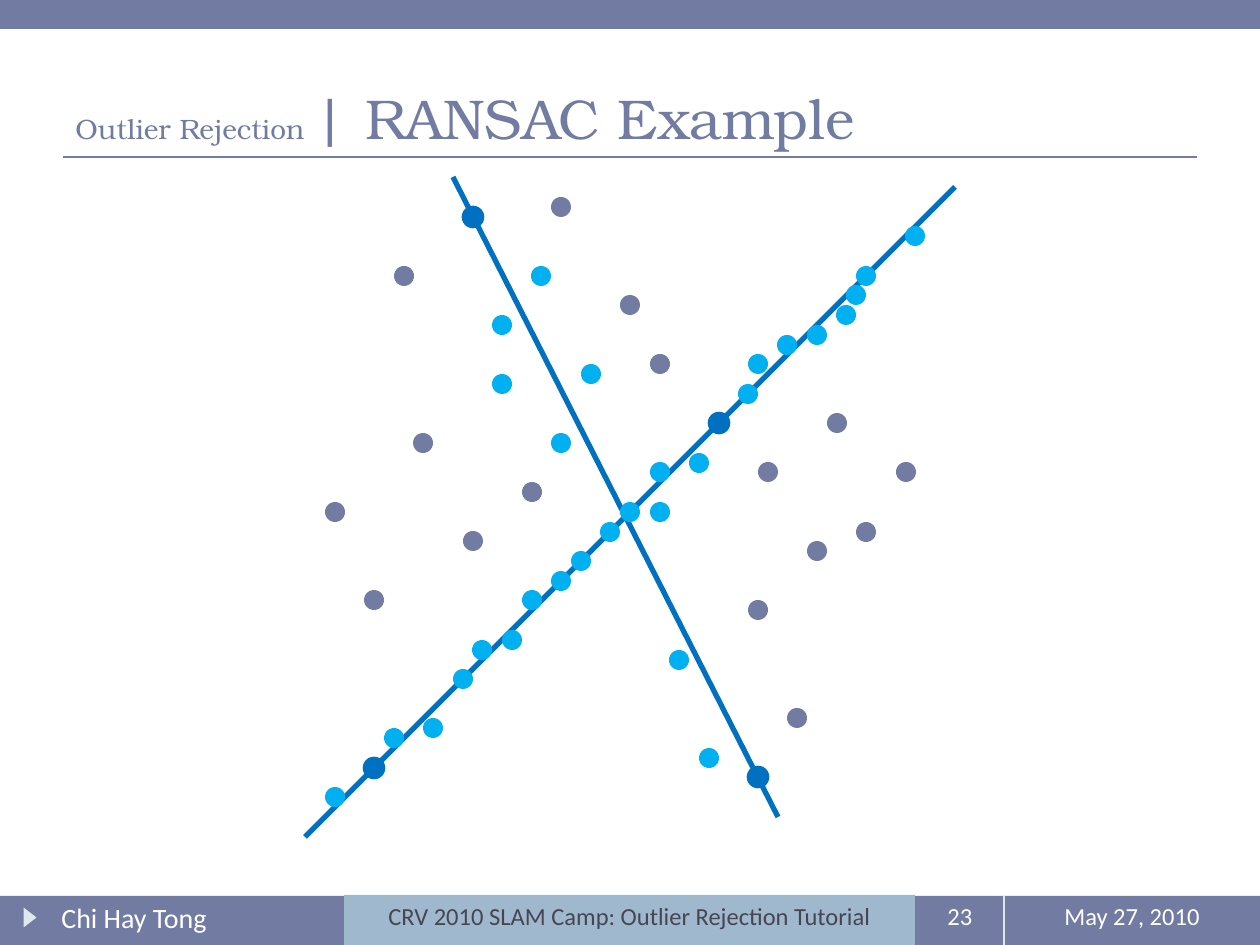
from typing import NamedTuple

from lxml.etree import SubElement
from pptx import Presentation
from pptx.dml.color import RGBColor
from pptx.enum.shapes import MSO_CONNECTOR, MSO_SHAPE as Shape
from pptx.enum.text import MSO_ANCHOR as Anchor, PP_ALIGN as Align
from pptx.oxml.ns import qn
from pptx.util import Pt

EMU_PER_PX = 914400 / 126
SLATE, PALE, BLUE, SKY = "727CA3", "DDE9EC", "0070C0", "00B0F0"
WHITE, BAND, INK = "FFFFFF", "9FB8CD", "464653"
SERIF, SANS = "TeX Gyre Bonum", "Calibri"
DOT = 20
FOOTER_TOP, FOOTER_HEIGHT = 895, 50


class Point(NamedTuple):
    x: int
    y: int


class Box(NamedTuple):
    x: int
    y: int
    w: int
    h: int


class Label(NamedTuple):
    text: str
    box: Box
    size: int
    align: Align
    color: str = WHITE
    fill: str = ""


class Model(NamedTuple):
    """A candidate line, the two samples that define it and its inliers."""
    samples: list[Point]
    start: Point
    end: Point
    inliers: list[Point]


def points(*pairs: tuple[int, int]) -> list[Point]:
    return [Point(*pair) for pair in pairs]


OUTLIERS = points(
    (561, 207), (817, 551), (404, 276), (423, 443), (335, 512), (630, 305),
    (532, 492), (473, 541), (374, 600), (660, 364), (837, 423), (768, 472),
    (906, 472), (866, 532), (758, 610), (797, 718))

MODELS = [
    Model(points((374, 768), (719, 423)), Point(305, 837), Point(955, 187), points(
        (335, 797), (394, 738), (433, 728), (463, 679), (482, 650), (512, 640),
        (532, 600), (561, 581), (581, 561), (660, 472), (699, 463), (748, 394),
        (758, 364), (787, 345), (817, 335), (846, 315), (856, 295), (866, 276),
        (915, 236))),
    Model(points((473, 217), (758, 777)), Point(778, 817), Point(453, 177), points(
        (502, 325), (541, 276), (502, 384), (591, 374), (561, 443), (679, 660),
        (709, 758), (610, 532), (630, 512), (660, 512))),
]

FOOTER = [
    Label("23", Box(916, FOOTER_TOP, 88, FOOTER_HEIGHT), 14, Align.CENTER),
    Label("May 27, 2010", Box(1004, FOOTER_TOP, 256, FOOTER_HEIGHT), 14, Align.CENTER),
    Label("Chi Hay Tong", Box(49, FOOTER_TOP - 1, 273, FOOTER_HEIGHT), 16, Align.LEFT),
    Label("CRV 2010 SLAM Camp: Outlier Rejection Tutorial",
          Box(344, FOOTER_TOP, 571, FOOTER_HEIGHT), 14, Align.CENTER, INK, BAND),
]


def px(n: int) -> int:
    return round(n * EMU_PER_PX)


def rgb(color: str) -> RGBColor:
    return RGBColor.from_string(color)


def add_shape(shapes, kind: Shape, box: Box, fill: str, outline: float = 0):
    s = shapes.add_shape(kind, *map(px, box))
    s.shadow.inherit = False
    s.fill.solid()
    s.fill.fore_color.rgb = rgb(fill)
    if outline:
        s.line.color.rgb = rgb(fill)
        s.line.width = Pt(outline)
    else:
        s.line.fill.background()
    return s


def add_line(shapes, start: Point, end: Point, color: str, width: float) -> None:
    c = shapes.add_connector(MSO_CONNECTOR.STRAIGHT, *map(px, start + end))
    c.line.color.rgb = rgb(color)
    c.line.width = Pt(width)
    SubElement(c._element.spPr, qn("a:effectLst"))


def add_dots(shapes, centres: list[Point], color: str, outline: float = 0) -> None:
    for x, y in centres:
        box = Box(x - DOT // 2, y - DOT // 2, DOT, DOT)
        add_shape(shapes, Shape.OVAL, box, color, outline)


def add_model(shapes, model: Model) -> None:
    add_dots(shapes, model.samples, BLUE, 1.5)
    add_line(shapes, model.start, model.end, BLUE, 3)
    add_dots(shapes.add_group_shape().shapes, model.inliers, SKY)


def add_label(shapes, label: Label) -> None:
    if label.fill:
        s = add_shape(shapes, Shape.RECTANGLE, label.box, label.fill)
    else:
        s = shapes.add_textbox(*map(px, label.box))
    tf = s.text_frame
    tf.word_wrap = True
    tf.vertical_anchor = Anchor.TOP
    p = tf.paragraphs[0]
    p.text = label.text
    p.alignment = label.align
    p.font.name = SANS
    p.font.size = Pt(label.size)
    p.font.color.rgb = rgb(label.color)


def add_title(shapes) -> None:
    tf = shapes.add_textbox(*map(px, Box(63, 21, 1134, 136))).text_frame
    tf.word_wrap = True
    tf.vertical_anchor = Anchor.BOTTOM
    p = tf.paragraphs[0]
    p.font.name = SERIF
    p.font.color.rgb = rgb(SLATE)
    for text, size in (("Outlier Rejection ", 16), ("| RANSAC Example", 32)):
        r = p.add_run()
        r.text = text
        r.font.size = Pt(size)


def add_frame(shapes) -> None:
    """Top and bottom bars, with the rules and marks that belong to them."""
    add_shape(shapes, Shape.RECTANGLE, Box(0, 896, 1260, 49), SLATE)
    add_line(shapes, Point(63, 157), Point(1197, 157), SLATE, 0.75)
    marker = add_shape(shapes, Shape.ISOSCELES_TRIANGLE, Box(20, 911, 20, 13), PALE)
    marker.rotation = 90
    add_shape(shapes, Shape.RECTANGLE, Box(0, 0, 1260, 29), SLATE)
    add_line(shapes, Point(1004, 896), Point(1004, 945), PALE, 0.75)


def main() -> None:
    prs = Presentation()
    prs.slide_width, prs.slide_height = px(1260), px(945)
    shapes = prs.slides.add_slide(prs.slide_layouts[6]).shapes
    add_frame(shapes)
    add_dots(shapes, OUTLIERS, SLATE)
    add_title(shapes)
    for model in MODELS:
        add_model(shapes, model)
    for label in FOOTER:
        add_label(shapes, label)
    prs.save("out.pptx")


if __name__ == "__main__":
    main()
